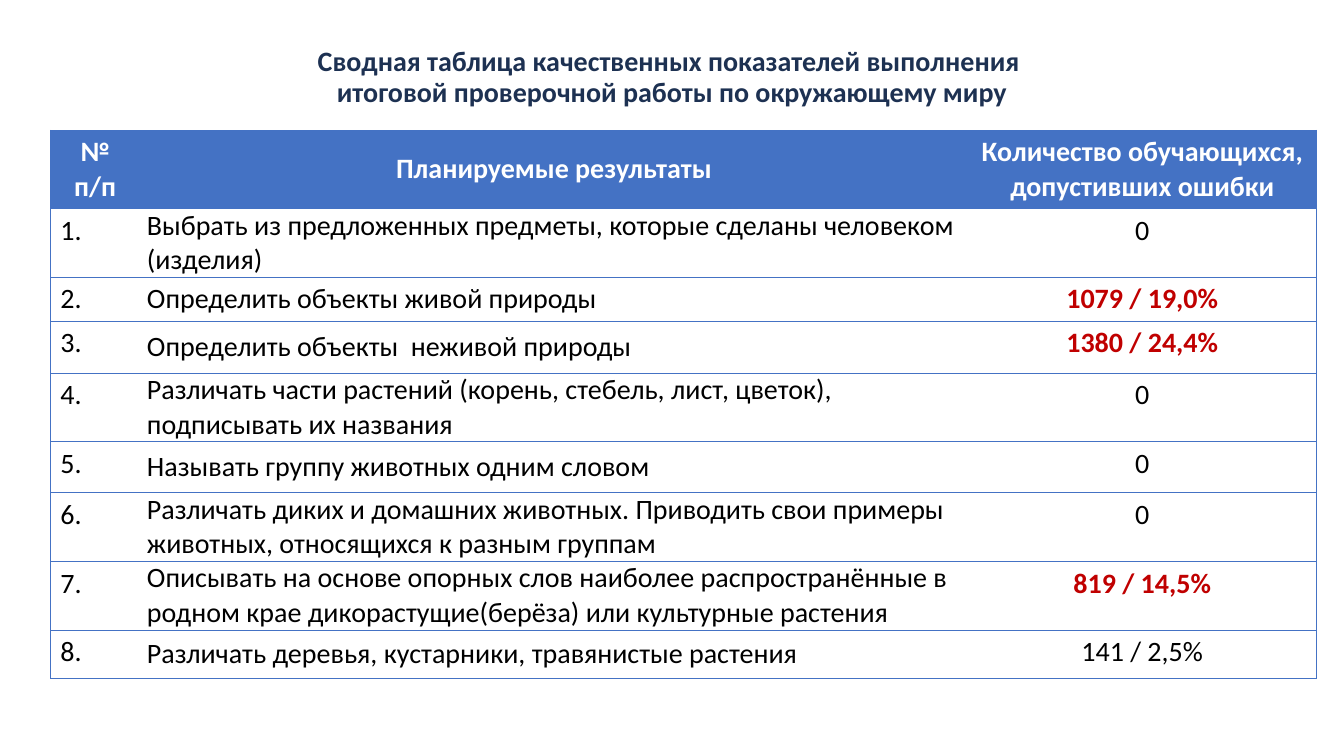
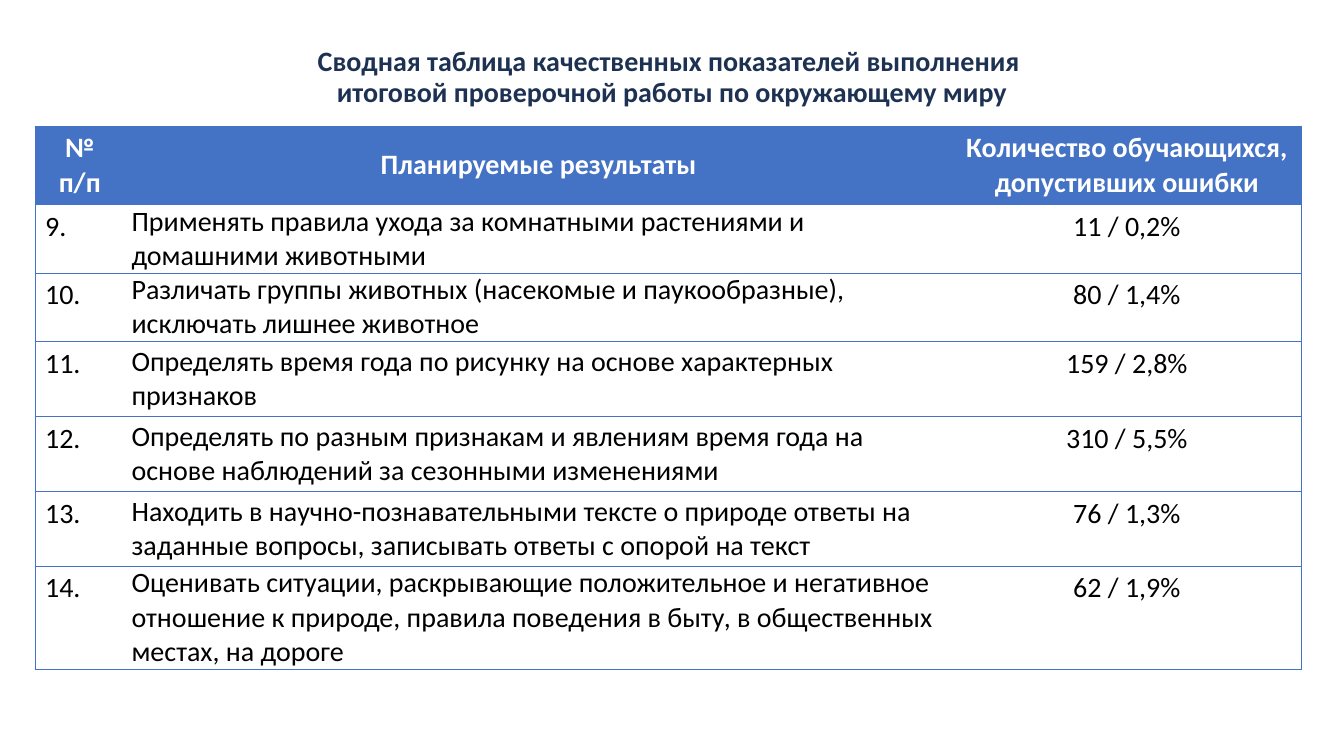
"""Build two slides with a summary table of test results."""
import lxml.etree
import pptx
import pptx.dml.color
import pptx.enum.text
import pptx.oxml.ns
import pptx.util

Pt = pptx.util.Pt
ALIGN = pptx.enum.text.PP_ALIGN
ANCHOR = pptx.enum.text.MSO_ANCHOR
COLORS = {"title": "1D3152", "accent": "4472C4", "white": "FFFFFF",
          "text": "000000", "alert": "C00000"}
FONT = {"name": "Calibri", "size": Pt(20)}
TITLE = ("Сводная таблица качественных показателей выполнения \v"
         "итоговой проверочной работы по окружающему миру")
HEADER = ("№ п/п", "Планируемые результаты",
          "Количество обучающихся, допустивших ошибки")
COLUMN_WIDTHS = (64, 591.5, 249)
HEADER_HEIGHT = 56
ALERTS = ("1079 / 19,0%", "1380 / 24,4%", "819 / 14,5%")
TABLES = (
    {"left": 36, "top": 93, "first": 1, "rows": (
        (49, "Выбрать из предложенных предметы, которые сделаны человеком (изделия)", "0"),
        (31.5, "Определить объекты живой природы", "1079 / 19,0%"),
        (37, "Определить объекты  неживой природы", "1380 / 24,4%"),
        (49, "Различать части растений (корень, стебель, лист, цветок), "
             "подписывать их названия", "0"),
        (36.5, "Называть группу животных одним словом", "0"),
        (49, "Различать диких и домашних животных. Приводить свои примеры "
             "животных, относящихся к разным группам", "0"),
        (49, "Описывать на основе опорных слов наиболее распространённые в "
             "родном крае дикорастущие(берёза) или культурные растения", "819 / 14,5%"),
        (35, "Различать деревья, кустарники, травянистые растения", "141 / 2,5%"),
    )},
    {"left": 25, "top": 90, "first": 9, "rows": (
        (49, "Применять правила ухода за комнатными растениями и домашними животными",
         "11 / 0,2%"),
        (49, "Различать группы животных (насекомые и паукообразные), "
             "исключать лишнее животное", "80 / 1,4%"),
        (53.5, "Определять время года по рисунку на основе характерных признаков",
         "159 / 2,8%"),
        (53.5, "Определять по разным признакам и явлениям время года на "
               "основе наблюдений за сезонными изменениями", "310 / 5,5%"),
        (53.5, "Находить в научно-познавательными тексте о природе ответы на "
               "заданные вопросы, записывать ответы с опорой на текст", "76 / 1,3%"),
        (73.5, "Оценивать ситуации, раскрывающие положительное и негативное "
               "отношение к природе, правила поведения в быту, в общественных "
               "местах, на дороге", "62 / 1,9%"),
    )},
)


def set_attrs(obj, values):
    for name, value in values.items():
        setattr(obj, name, value)


def write(tf, text, color, bold, align):
    tf.text = text
    p = tf.paragraphs[0]
    p.alignment = align
    for r in p.runs:
        set_attrs(r.font, {**FONT, "bold": bold})
        r.font.color.rgb = pptx.dml.color.RGBColor.from_string(COLORS[color])
    return p


def add_title(s):
    tf = s.shapes.add_textbox(Pt(55.5), Pt(19.5), Pt(849), Pt(72.5)).text_frame
    set_attrs(tf, {"word_wrap": True, "vertical_anchor": ANCHOR.MIDDLE})
    write(tf, TITLE, "title", True, ALIGN.CENTER).line_spacing = 0.9


def set_borders(cell, visible):
    qn = pptx.oxml.ns.qn
    tc_pr = cell._tc.get_or_add_tcPr()
    for i, side in enumerate("LRTB"):
        ln = lxml.etree.Element(qn(f"a:ln{side}"), w=str(Pt(0.5)))
        if side in visible:
            fill = lxml.etree.SubElement(ln, qn("a:solidFill"))
            lxml.etree.SubElement(fill, qn("a:srgbClr"), val=COLORS["accent"])
        else:
            lxml.etree.SubElement(ln, qn("a:noFill"))
        tc_pr.insert(i, ln)


def format_cell(cell, text, row, col):
    header = row == 0
    alert = text in ALERTS
    color = "white" if header else "alert" if alert else "text"
    align = ALIGN.CENTER if header or col == 2 else ALIGN.LEFT
    write(cell.text_frame, text, color, header or alert, align)
    cell.vertical_anchor = ANCHOR.MIDDLE if header or col == 1 else ANCHOR.TOP
    if header:
        cell.fill.solid()
        cell.fill.fore_color.rgb = pptx.dml.color.RGBColor.from_string(COLORS["accent"])
    else:
        cell.fill.background()
        if col == 1:
            set_attrs(cell, {"margin_left": Pt(5), "margin_right": Pt(5),
                             "margin_top": 0, "margin_bottom": 0})
    set_borders(cell, ("LTB", "TB", "RTB")[col])


def add_results(s, left, top, first, rows):
    heights = [HEADER_HEIGHT] + [height for height, _, _ in rows]
    lines = [HEADER] + [(f"{n}.", result, errors)
                        for n, (_, result, errors) in enumerate(rows, first)]
    table = s.shapes.add_table(len(lines), len(HEADER), Pt(left), Pt(top),
                               Pt(sum(COLUMN_WIDTHS)), Pt(sum(heights))).table
    set_attrs(table, {"first_row": False, "horz_banding": False})
    for column, width in zip(table.columns, COLUMN_WIDTHS):
        column.width = Pt(width)
    for i, (height, line) in enumerate(zip(heights, lines)):
        table.rows[i].height = Pt(height)
        for j, text in enumerate(line):
            format_cell(table.cell(i, j), text, i, j)


def main():
    prs = pptx.Presentation()
    set_attrs(prs, {"slide_width": Pt(960), "slide_height": Pt(540)})
    for content in TABLES:
        s = prs.slides.add_slide(prs.slide_layouts[6])
        add_title(s)
        add_results(s, **content)
    prs.save("out.pptx")


if __name__ == "__main__":
    main()
